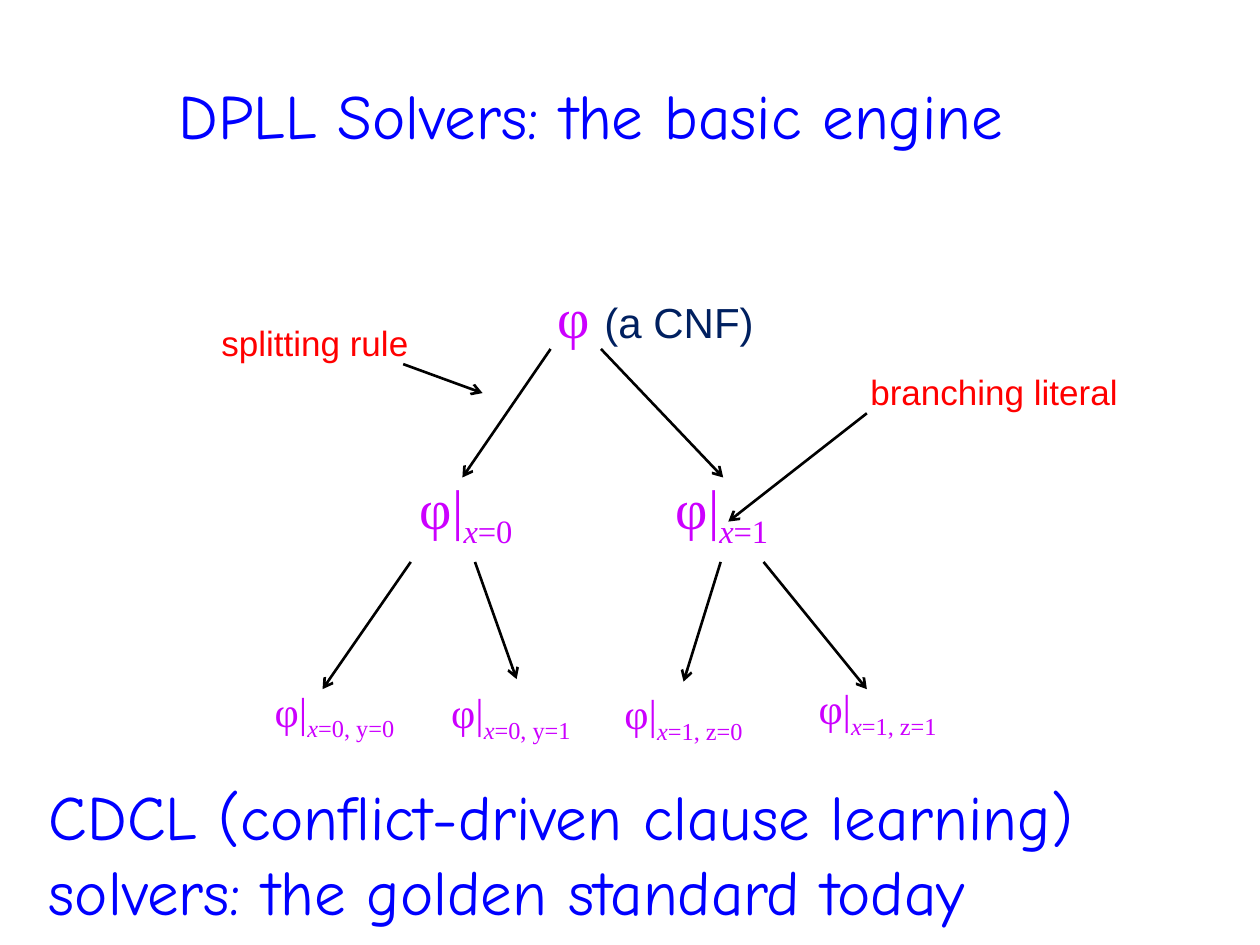
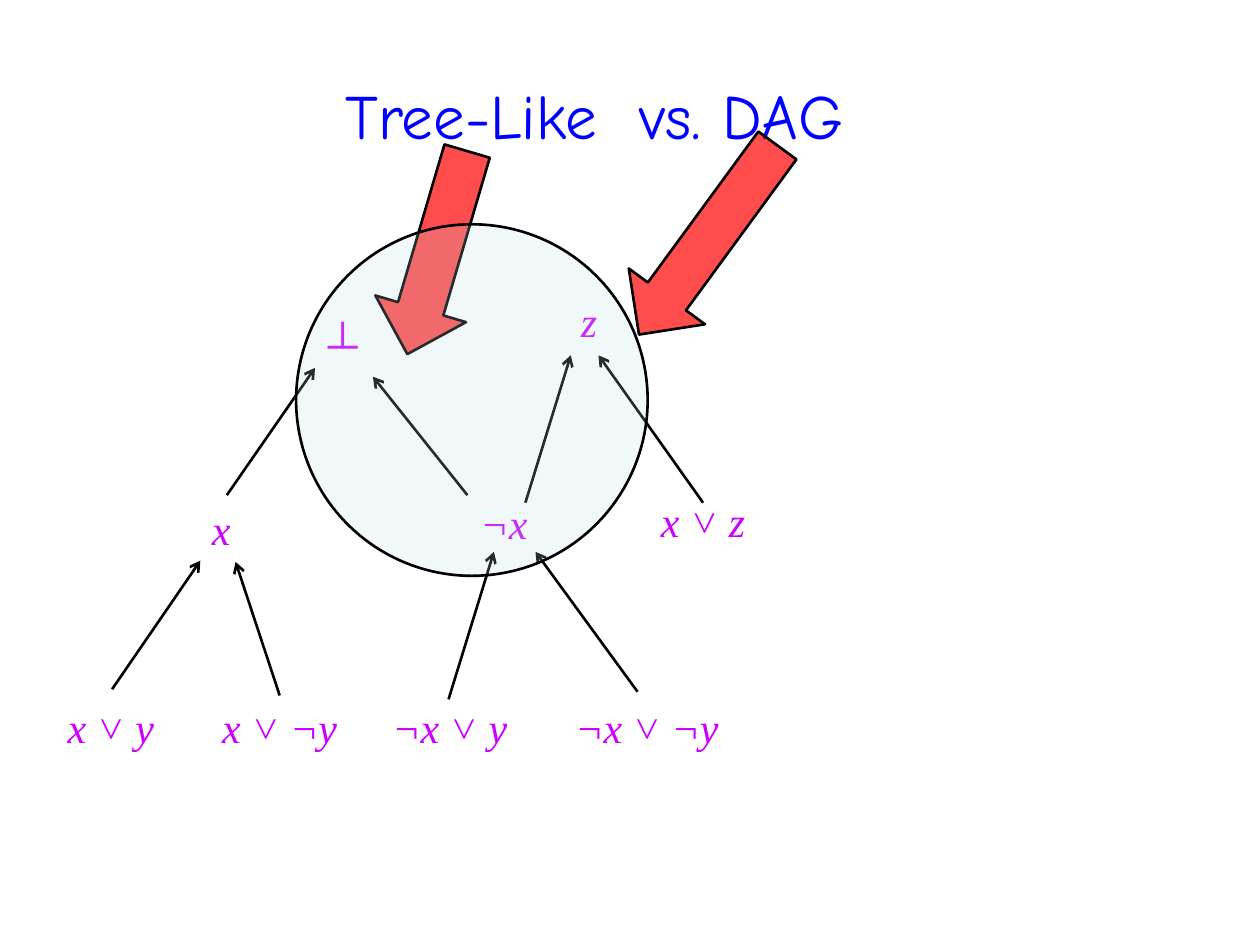
from lxml import etree
from pptx import Presentation
from pptx.dml.color import RGBColor
from pptx.enum.shapes import MSO_CONNECTOR, MSO_SHAPE
from pptx.enum.text import MSO_ANCHOR, MSO_AUTO_SIZE, PP_ALIGN
from pptx.oxml.ns import qn
from pptx.util import Pt

STRAIGHT = MSO_CONNECTOR.STRAIGHT
BLOCK_ARROW, OVAL = MSO_SHAPE.RIGHT_ARROW, MSO_SHAPE.OVAL
MIDDLE = MSO_ANCHOR.MIDDLE
LEFT, CENTER = PP_ALIGN.LEFT, PP_ALIGN.CENTER
NO_FIT, GROW = MSO_AUTO_SIZE.NONE, MSO_AUTO_SIZE.SHAPE_TO_FIT_TEXT

EMU_PER_PX = 9144
TOP_SIDE = 0
TITLE_ONLY = 5
COLORS = {
    "heading": "0000FF",
    "formula": "CC00FF",
    "remark": "002060",
    "callout": "FF0000",
    "line": "000000",
    "pointer": "FF0000",
    "bubble": "BBE0E3",
}
STYLES = {
    "heading": ("Comic Neue", 36, "heading"),
    "large": ("Times New Roman", 32, "formula"),
    "small": ("Times New Roman", 24, "formula"),
    "remark": ("Arial", 24, "remark"),
    "callout": ("Arial", 20, "callout"),
}


def px(*lengths):
    return [length * EMU_PER_PX for length in lengths]


def rgb(name):
    return RGBColor.from_string(COLORS[name])


def set_font(font, style):
    font.name, size, color = STYLES[style]
    font.size = Pt(size)
    font.color.rgb = rgb(color)


class Deck:
    def __init__(self):
        self.prs = Presentation()
        self.prs.slide_width, self.prs.slide_height = px(1000, 750)
        self.slide = None

    def add_slide(self, title, left, width):
        layout = self.prs.slide_layouts[TITLE_ONLY]
        self.slide = self.prs.slides.add_slide(layout)
        heading = self.slide.shapes.title
        heading.left, heading.top, heading.width, heading.height = px(left, 44, width, 94)
        self.fill_heading(heading, title)

    def fill_heading(self, box, text):
        frame = box.text_frame
        frame.word_wrap = True
        frame.auto_size = NO_FIT
        frame.vertical_anchor = MIDDLE
        paragraph = frame.paragraphs[0]
        paragraph.text = text
        paragraph.alignment = LEFT
        set_font(paragraph.font, "heading")

    def statement(self, text, left, top, width, height):
        box = self.slide.shapes.add_textbox(*px(left, top, width, height))
        self.fill_heading(box, text)

    def label_box(self, left, top, width, size):
        height = round(size * 1.2 / 72 * 100 + 10)
        box = self.slide.shapes.add_textbox(*px(left, top, width, height))
        frame = box.text_frame
        frame.word_wrap = False
        frame.auto_size = GROW
        paragraph = frame.paragraphs[0]
        paragraph.alignment = CENTER
        paragraph.space_before = Pt(size / 10)
        return box, paragraph

    def label(self, text, left, top, width, style, italic=None):
        box, paragraph = self.label_box(left, top, width, STYLES[style][1])
        paragraph.text = text
        set_font(paragraph.font, style)
        paragraph.font.italic = italic
        return box

    def mixed_label(self, parts, left, top, width):
        size = max(STYLES[style][1] for _, style in parts)
        paragraph = self.label_box(left, top, width, size)[1]
        for text, style in parts:
            run = paragraph.add_run()
            run.text = text
            set_font(run.font, style)

    def restriction(self, values, left, top, width, style):
        box, paragraph = self.label_box(left, top, width, STYLES[style][1])
        set_font(paragraph.font, style)
        for text, lowered, italic in (("φ|", False, False), ("x", True, True), (values, True, False)):
            run = paragraph.add_run()
            run.text = text
            run.font.italic = italic
            if lowered:
                run._r.get_or_add_rPr().set("baseline", "-25000")
        return box

    def arrow(self, start, end, start_box=None, end_box=None):
        connector = self.slide.shapes.add_connector(STRAIGHT, *px(*start, *end))
        if start_box is not None:
            connector.begin_connect(start_box, TOP_SIDE)
        if end_box is not None:
            connector.end_connect(end_box, TOP_SIDE)
        connector.line.color.rgb = rgb("line")
        connector.line.width = Pt(1.5)
        etree.SubElement(connector.line._get_or_add_ln(), qn("a:tailEnd"), type="arrow")
        etree.SubElement(connector._element.spPr, qn("a:effectLst"))

    def block(self, kind, left, top, width, height, color, opacity, rotation=0):
        shape = self.slide.shapes.add_shape(kind, *px(left, top, width, height))
        shape.rotation = rotation
        shape.shadow.inherit = False
        shape.fill.solid()
        shape.fill.fore_color.rgb = rgb(color)
        fill_color = shape._element.spPr.find(qn("a:solidFill"))[0]
        etree.SubElement(fill_color, qn("a:alpha"), val=str(opacity * 1000))
        shape.line.color.rgb = rgb("line")
        shape.line.width = Pt(1.5)


def build_solvers(deck):
    deck.add_slide("DPLL Solvers: the basic engine", 132, 738)
    deck.mixed_label([("φ ", "large"), ("(a CNF)", "remark")], 432, 219, 177)
    for values, left in (("=0", 320), ("=1", 523)):
        deck.restriction(values, left, 371, 100, "large")
    deck.label("branching literal", 680, 289, 218, "callout")
    deck.label("splitting rule", 165, 250, 170, "callout")

    leaves = {}
    for values, left, top in (
        ("=0, y=0", 203, 539),
        ("=0, y=1", 343, 540),
        ("=1, z=0", 480, 541),
        ("=1, z=1", 634, 537),
    ):
        leaves[values] = deck.restriction(values, left, top, 125, "small")

    for start, end in (
        ((437, 277), (367, 379)),
        ((477, 277), (574, 379)),
        ((688, 328), (578, 414)),
        ((320, 289), (383, 312)),
        ((326, 446), (256, 547)),
        ((377, 446), (410, 539)),
        ((606, 446), (688, 547)),
    ):
        deck.arrow(start, end)
    deck.arrow((572, 446), (542, 541), end_box=leaves["=1, z=0"])
    deck.statement(
        "CDCL (conflict-driven clause learning) solvers: the golden standard today",
        29, 630, 937, 94,
    )


def build_refutation(deck):
    deck.add_slide("Tree-Like  vs. DAG", 264, 463)
    deck.label("┴", 250, 248, 44, "small")
    clauses = {}
    for clause, left, top, width in (
        ("¬x", 371, 390, 58),
        ("x", 158, 395, 35),
        ("z", 451, 230, 33),
        ("x ˅ z", 514, 388, 88),
        ("x ˅ y", 43, 552, 90),
        ("x ˅ ¬y", 166, 552, 112),
        ("¬x ˅ y", 301, 552, 112),
        ("¬x ˅ ¬y", 446, 552, 135),
    ):
        clauses[clause] = deck.label(clause, left, top, width, "small", italic=True)

    for start, end in (
        ((89, 547), (159, 445)),
        ((356, 555), (392, 438)),
        ((506, 549), (425, 438)),
        ((180, 393), (250, 292)),
        ((371, 393), (296, 299)),
        ((417, 399), (453, 282)),
        ((558, 399), (475, 282)),
    ):
        deck.arrow(start, end)
    deck.arrow((222, 552), (187, 446), start_box=clauses["x ˅ ¬y"])

    deck.block(BLOCK_ARROW, 263, 163, 168, 75, "pointer", 70, 106.4)
    deck.block(OVAL, 235, 178, 279, 279, "bubble", 20)
    deck.block(BLOCK_ARROW, 469, 153, 186, 75, "pointer", 70, 126.2)


def main():
    deck = Deck()
    build_solvers(deck)
    build_refutation(deck)
    deck.prs.save("out.pptx")


if __name__ == "__main__":
    main()
